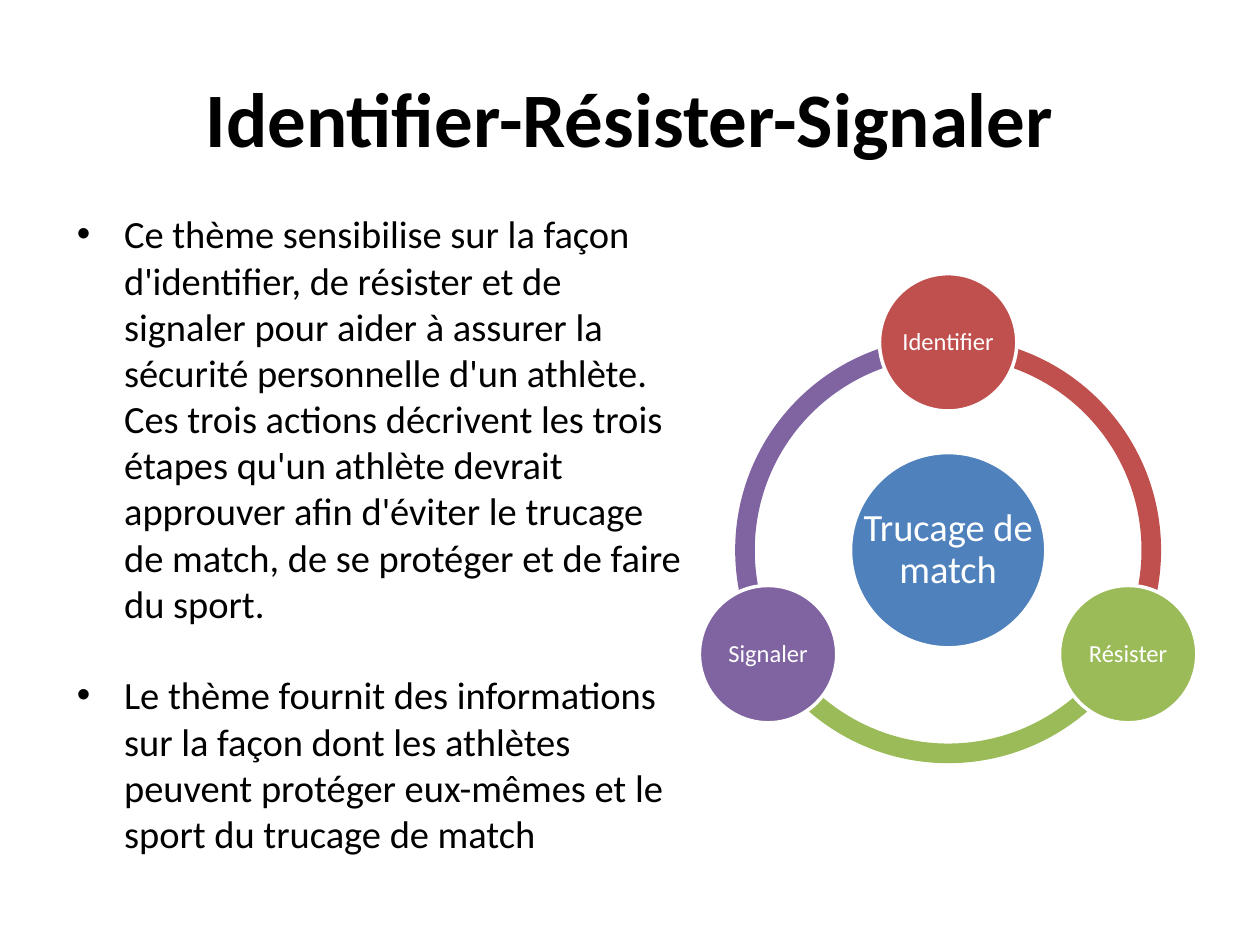
from math import cos, radians, sin

from pptx import Presentation
from pptx.dml.color import RGBColor
from pptx.enum.shapes import MSO_SHAPE as SHAPE
from pptx.enum.text import MSO_ANCHOR as ANCHOR, MSO_AUTO_SIZE as AUTO, PP_ALIGN as ALIGN
from pptx.util import Pt

BLACK = RGBColor(0x00, 0x00, 0x00)
WHITE = RGBColor(0xFF, 0xFF, 0xFF)
BLUE = RGBColor(0x4F, 0x81, 0xBD)
RED = RGBColor(0xC0, 0x50, 0x4D)
GREEN = RGBColor(0x9B, 0xBB, 0x59)
PURPLE = RGBColor(0x80, 0x64, 0xA2)

FONT = "Calibri"
CX, CY = 541.8, 314.4  # centre of the cycle
ORBIT = 118.8  # distance from the centre to each step
RING_D, HUB_D, STEP_D = 243.4, 111.6, 78.5
RING_THICKNESS = 0.046

# Clockwise, each with the angle of its circle (0 is right, 90 is down)
STEPS = [("Identifier", RED, 270), ("Résister", GREEN, 30), ("Signaler", PURPLE, 150)]

POINTS = [
    "Ce thème sensibilise sur la façon d'identifier, de résister et de signaler "
    "pour aider à assurer la sécurité personnelle d'un athlète. Ces trois actions "
    "décrivent les trois étapes qu'un athlète devrait approuver afin d'éviter le "
    "trucage de match, de se protéger et de faire du sport.",
    "Le thème fournit des informations sur la façon dont les athlètes peuvent "
    "protéger eux-mêmes et le sport du trucage de match",
]


def write(p, text, size, color=BLACK, bold=False, align=None, before=0, spacing=None):
    p.text = text
    p.alignment = align
    p.space_before = Pt(before)
    p.line_spacing = spacing
    for r in p.runs:
        f = r.font
        f.name, f.size, f.bold = FONT, Pt(size), bold
        f.color.rgb = color


def place(sp, left, top, width, height):
    sp.left, sp.top, sp.width, sp.height = Pt(left), Pt(top), Pt(width), Pt(height)


def add_round(slide, kind, cx, cy, diameter, color):
    """Add a filled shape whose square frame is centred on (cx, cy)."""
    sp = slide.shapes.add_shape(kind, Pt(cx - diameter / 2), Pt(cy - diameter / 2),
                                Pt(diameter), Pt(diameter))
    sp.shadow.inherit = False
    sp.fill.solid()
    sp.fill.fore_color.rgb = color
    sp.line.fill.background()
    return sp


def add_arc(slide, start, end, color):
    sp = add_round(slide, SHAPE.BLOCK_ARC, CX, CY, RING_D, color)
    # Angles are stored in 60000ths of a degree, adjustments in 100000ths
    sp.adjustments[0] = start * 0.6
    sp.adjustments[1] = end * 0.6
    sp.adjustments[2] = RING_THICKNESS


def add_circle(slide, cx, cy, diameter, color, text, size):
    sp = add_round(slide, SHAPE.OVAL, cx, cy, diameter, color)
    sp.line.color.rgb = WHITE
    sp.line.width = Pt(2)
    tf = sp.text_frame
    tf.word_wrap = False
    tf.vertical_anchor = ANCHOR.MIDDLE
    tf.margin_left = tf.margin_right = tf.margin_top = tf.margin_bottom = Pt(1.5)
    write(tf.paragraphs[0], text, size, color=WHITE, align=ALIGN.CENTER, spacing=0.9)


def add_title(slide, text):
    sp = slide.shapes.title
    place(sp, 36, 21.6, 648, 90)
    sp.text_frame.vertical_anchor = ANCHOR.MIDDLE
    write(sp.text_frame.paragraphs[0], text, 44, bold=True, align=ALIGN.CENTER)


def add_points(slide, points):
    sp = slide.placeholders[1]
    place(sp, 36.7, 116.6, 363.6, 356.4)
    tf = sp.text_frame
    tf.auto_size = AUTO.NONE
    for i, text in enumerate(points):
        p = tf.add_paragraph() if i else tf.paragraphs[0]
        write(p, text, 22, before=26 if i else 0)


def add_cycle(slide):
    for _, color, angle in reversed(STEPS):
        add_arc(slide, angle, (angle + 120) % 360, color)
    add_circle(slide, CX, CY, HUB_D, BLUE, "Trucage de\vmatch", 22)
    for text, color, angle in STEPS:
        a = radians(angle)
        add_circle(slide, CX + ORBIT * cos(a), CY + ORBIT * sin(a), STEP_D, color, text, 14)


def main():
    prs = Presentation()
    prs.slide_width, prs.slide_height = Pt(720), Pt(540)
    slide = prs.slides.add_slide(prs.slide_layouts[1])
    add_title(slide, "Identifier-Résister-Signaler")
    add_points(slide, POINTS)
    add_cycle(slide)
    prs.save("out.pptx")


if __name__ == "__main__":
    main()
